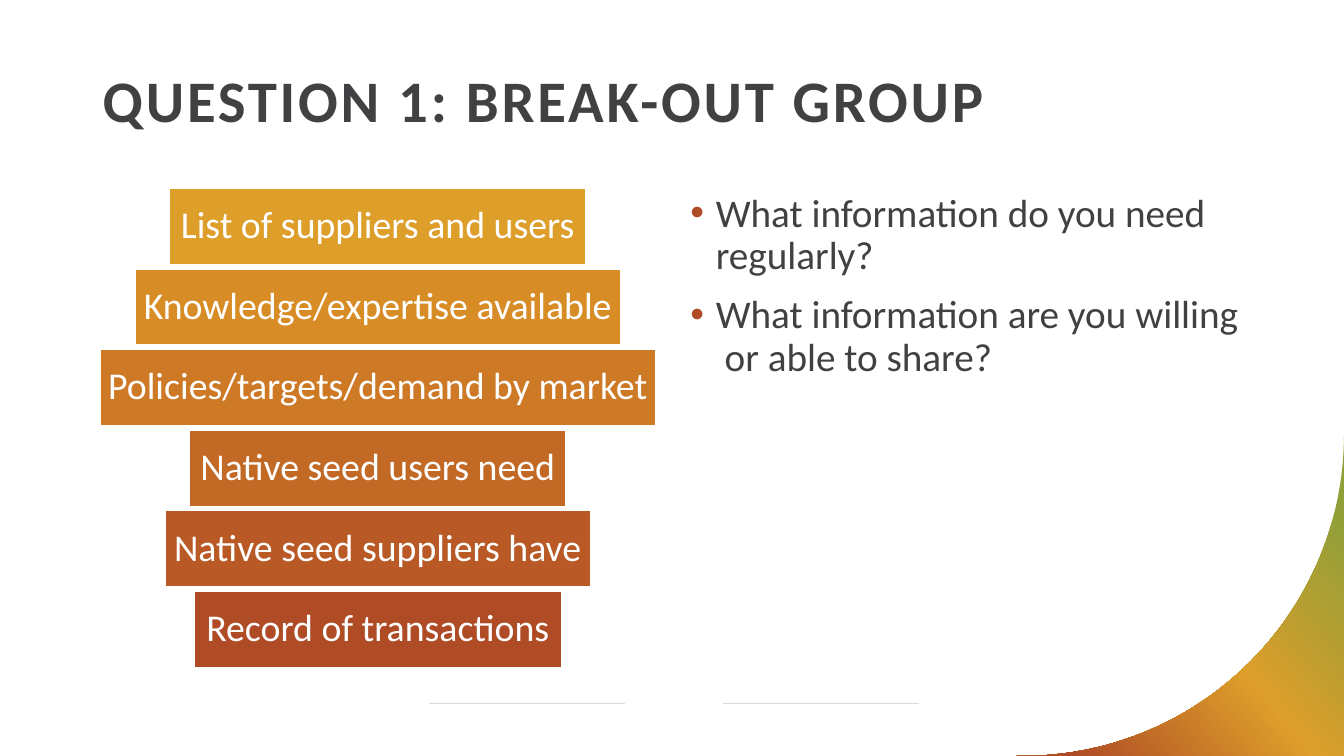
from copy import deepcopy
from math import cos, pi, sin

from pptx import Presentation, util as u
from pptx.dml.color import RGBColor
from pptx.enum import shapes, text
from pptx.oxml import parse_xml
from pptx.oxml.ns import nsdecls, qn

COLORS = {
    "text": "414042", "white": "FFFFFF", "rule": "D9D8DA",
    "green": "919F39", "gold": "DD9E2A", "amber": "D88C25",
    "orange": "CE7925", "copper": "C36926", "rust": "B95A26", "brick": "AF4C26",
}
SLIDE_W, SLIDE_H = 33.87, 19.05
BARS = [
    ("List of suppliers and users", 10.49, "gold"),
    ("Knowledge/expertise available", 12.24, "amber"),
    ("Policies/targets/demand by market", 14.0, "orange"),
    ("Native seed users need", 9.5, "copper"),
    ("Native seed suppliers have", 10.72, "rust"),
    ("Record of transactions", 9.25, "brick"),
]
BAR_CENTER, BAR_TOP, BAR_PITCH, BAR_H = 9.52, 4.75, 2.03, 1.92
QUESTIONS = [
    "What information do you need regularly?",
    "What information are you willing  or able to share?",
]


def rgb(name):
    return RGBColor.from_string(COLORS[name])


class SlideBuilder:
    font = "Calibri"

    def __init__(self, slide):
        self.shapes = slide.shapes

    def add_run(self, p, content, size, color, bold=False, spacing=0):
        p.line_spacing = 0.9
        r = p.add_run()
        r.text = content
        r.font.name, r.font.size, r.font.bold = self.font, u.Pt(size), bold
        r.font.color.rgb = rgb(color)
        if spacing:
            r._r.get_or_add_rPr().set("spc", str(spacing * 100))

    def text_frame(self, x, y, w, h):
        tf = self.shapes.add_textbox(u.Cm(x), u.Cm(y), u.Cm(w), u.Cm(h)).text_frame
        tf.word_wrap = True
        return tf

    def title(self, content, x, y, w, h):
        p = self.text_frame(x, y, w, h).paragraphs[0]
        self.add_run(p, content, 42, "text", bold=True, spacing=2)

    def bullets(self, items, x, y, w, h):
        tf = self.text_frame(x, y, w, h)
        indent = u.Cm(0.64)
        for i, item in enumerate(items):
            p = tf.paragraphs[0] if i == 0 else tf.add_paragraph()
            pPr = p._p.get_or_add_pPr()
            pPr.set("marL", str(indent))
            pPr.set("indent", str(-indent))
            pPr.append(parse_xml(
                f'<a:buClr {nsdecls("a")}><a:srgbClr val="{COLORS["brick"]}"/></a:buClr>'))
            pPr.append(parse_xml(f'<a:buFont {nsdecls("a")} typeface="Arial"/>'))
            pPr.append(parse_xml(f'<a:buChar {nsdecls("a")} char="•"/>'))
            p.space_after = u.Pt(12)
            self.add_run(p, item, 28, "text")

    def bar(self, label, center, y, w, h, color):
        sp = self.shapes.add_shape(shapes.MSO_SHAPE.RECTANGLE,
                                   u.Cm(center - w / 2), u.Cm(y), u.Cm(w), u.Cm(h))
        sp.shadow.inherit = False
        sp.fill.solid()
        sp.fill.fore_color.rgb = rgb(color)
        sp.line.color.rgb = rgb("white")
        sp.line.width = u.Pt(1)
        tf = sp.text_frame
        tf.word_wrap = True
        tf.vertical_anchor = text.MSO_ANCHOR.MIDDLE
        tf.margin_left = tf.margin_right = tf.margin_top = tf.margin_bottom = u.Cm(0.18)
        p = tf.paragraphs[0]
        p.alignment = text.PP_ALIGN.CENTER
        self.add_run(p, label, 27, "white")

    def rule(self, x, y, w):
        line = self.shapes.add_connector(shapes.MSO_CONNECTOR.STRAIGHT,
                                         u.Cm(x), u.Cm(y), u.Cm(x + w), u.Cm(y))
        line.line.color.rgb = rgb("rule")
        line.line.width = u.Pt(0.5)
        line._element.spPr.append(parse_xml(f'<a:effectLst {nsdecls("a")}/>'))

    def corner(self, radius, tail, stops, angle, steps=60):
        """Fill the bottom right corner outside a quarter circle."""
        cx, cy = SLIDE_W - radius, SLIDE_H - radius
        turns = [pi / 2 * i / steps for i in range(steps + 1)]
        points = [(cx + radius * cos(t), cy + radius * sin(t)) for t in turns]
        points.append((cx - tail, SLIDE_H))
        outline = self.shapes.build_freeform(u.Cm(SLIDE_W), u.Cm(SLIDE_H))
        outline.add_line_segments([(u.Cm(x), u.Cm(y)) for x, y in points])
        sp = outline.convert_to_shape()
        sp.shadow.inherit = False
        sp.line.fill.background()
        sp.fill.gradient()
        sp.fill.gradient_angle = 360 - angle
        stop_list = sp._element.spPr.find(".//" + qn("a:gsLst"))
        stop_list.append(deepcopy(stop_list[-1]))
        for stop, (position, color) in zip(sp.fill.gradient_stops, stops):
            stop.position = position
            stop.color.rgb = rgb(color)


def main():
    prs = Presentation()
    prs.slide_width, prs.slide_height = u.Cm(SLIDE_W), u.Cm(SLIDE_H)
    s = SlideBuilder(prs.slides.add_slide(prs.slide_layouts[6]))
    for x in (10.8, 18.21):
        s.rule(x, 17.73, 4.95)
    s.corner(8.09, 0.15, [(0.12, "green"), (0.5, "gold"), (0.91, "brick")], 140)
    s.bullets(QUESTIONS, 17.15, 4.75, 14.4, 12.09)
    s.title("QUESTION 1: BREAK-OUT GROUP", 2.34, 1.68, 29.21, 2.59)
    for i, (label, width, color) in enumerate(BARS):
        s.bar(label, BAR_CENTER, BAR_TOP + i * BAR_PITCH, width, BAR_H, color)
    prs.save("out.pptx")


if __name__ == "__main__":
    main()
